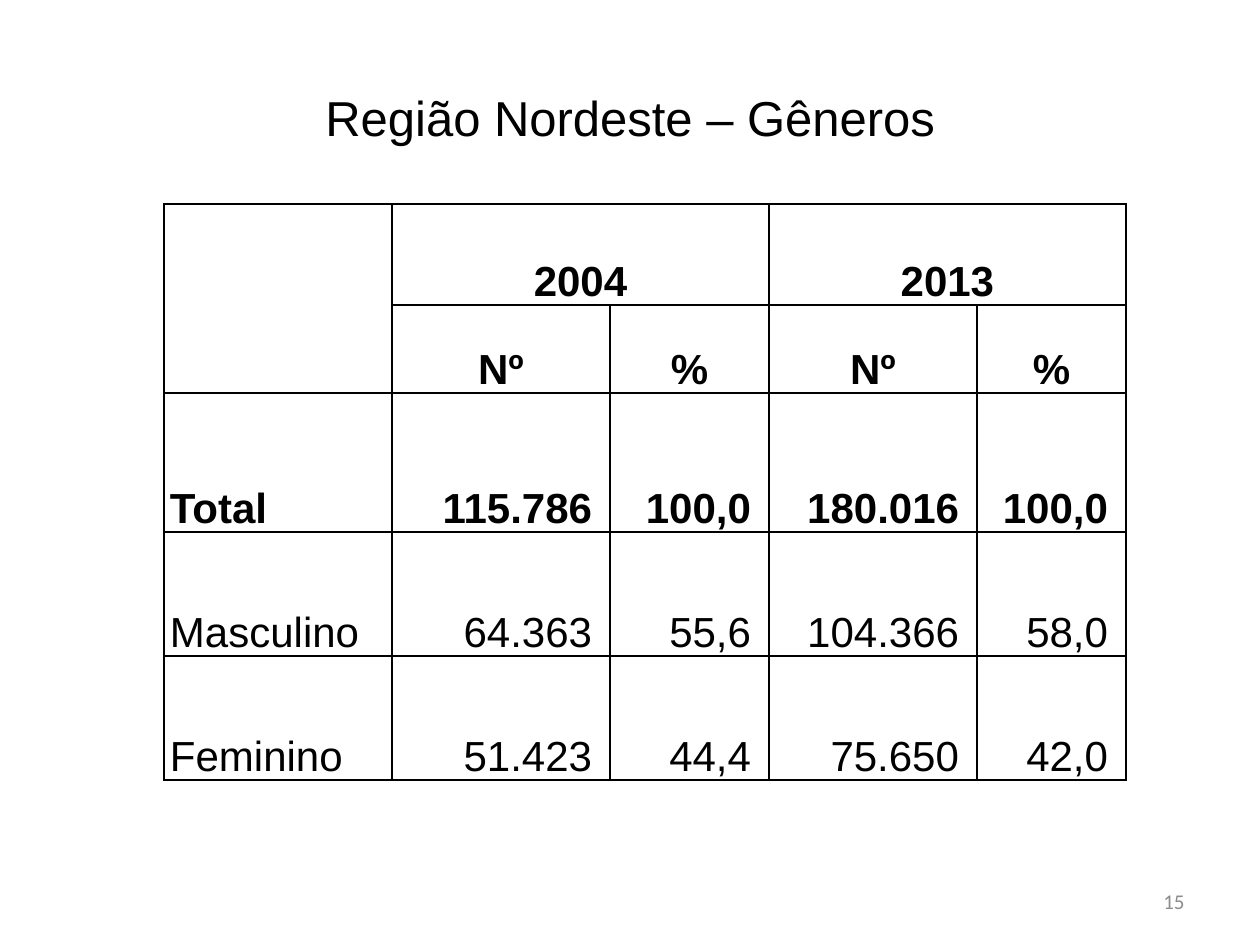
import lxml.etree
import pptx
import pptx.dml.color
import pptx.enum.text
import pptx.oxml.ns
import pptx.util

ALIGN = pptx.enum.text.PP_ALIGN
ANCHOR = pptx.enum.text.MSO_ANCHOR
PX_PER_INCH = 126

COLUMNS = [228, 218, 159, 208, 149]
ROWS = [101, 88, 139, 124, 124]
CELLS = [
    ["", "2004", "", "2013", ""],
    ["", "Nº", "%", "Nº", "%"],
    ["Total", "115.786", "100,0", "180.016", "100,0"],
    ["Masculino", "64.363", "55,6", "104.366", "58,0"],
    ["Feminino", "51.423", "44,4", "75.650", "42,0"],
]
HEADER_ROWS = 2
BOLD_ROWS = 3


def px(n):
    return pptx.util.Emu(round(n * 914400 / PX_PER_INCH))


def rgb(color):
    return pptx.dml.color.RGBColor.from_string(color)


def format_paragraph(p, size, color, align, name="Arial", bold=False):
    p.alignment = align
    p.font.name = name
    p.font.size = pptx.util.Pt(size)
    p.font.bold = bold
    p.font.color.rgb = rgb(color)


def set_borders(cell, color, points):
    """Line all four sides; border elements come before the cell fill."""
    qn = pptx.oxml.ns.qn
    tc_pr = cell._tc.get_or_add_tcPr()
    for i, side in enumerate(("a:lnL", "a:lnR", "a:lnT", "a:lnB")):
        ln = lxml.etree.Element(qn(side), w=str(pptx.util.Pt(points)))
        fill = lxml.etree.SubElement(ln, qn("a:solidFill"))
        lxml.etree.SubElement(fill, qn("a:srgbClr"), val=color)
        tc_pr.insert(i, ln)


def add_title(slide, x, y, w, h):
    title = slide.shapes.title
    title.left, title.top, title.width, title.height = map(px, (x, y, w, h))
    tf = title.text_frame
    tf.text = "Região Nordeste – Gêneros"
    tf.vertical_anchor = ANCHOR.MIDDLE
    format_paragraph(tf.paragraphs[0], 28, "000000", ALIGN.CENTER)


def format_cell(cell, row, col):
    is_number = row >= HEADER_ROWS and col > 0
    cell.fill.background()
    set_borders(cell, "000000", 1)
    cell.vertical_anchor = ANCHOR.BOTTOM
    cell.margin_left = px(6)
    cell.margin_right = px(18 if is_number else 6)
    cell.margin_top = cell.margin_bottom = 0
    if row < HEADER_ROWS:
        align = ALIGN.CENTER
    else:
        align = ALIGN.RIGHT if is_number else ALIGN.LEFT
    p = cell.text_frame.paragraphs[0]
    p.line_spacing = 1.07
    format_paragraph(p, 24, "000000", align, bold=row < BOLD_ROWS)


def add_gender_table(slide, x, y):
    frame = slide.shapes.add_table(len(ROWS), len(COLUMNS), px(x), px(y),
                                   px(sum(COLUMNS)), px(sum(ROWS)))
    table = frame.table
    table.first_row = table.horz_banding = False
    for column, width in zip(table.columns, COLUMNS):
        column.width = px(width)
    for row, height in zip(table.rows, ROWS):
        row.height = px(height)

    for r, texts in enumerate(CELLS):
        for c, text in enumerate(texts):
            cell = table.cell(r, c)
            cell.text = text
            format_cell(cell, r, c)

    # Empty corner, then one heading over each year's pair of columns
    table.cell(0, 0).merge(table.cell(1, 0))
    for c in (1, 3):
        table.cell(0, c).merge(table.cell(0, c + 1))


def add_slide_number(slide, x, y, w, h):
    tf = slide.shapes.add_textbox(px(x), px(y), px(w), px(h)).text_frame
    tf.word_wrap = True
    tf.vertical_anchor = ANCHOR.MIDDLE
    tf.text = "15"
    format_paragraph(tf.paragraphs[0], 12, "8C8C8C", ALIGN.RIGHT, "Calibri")


def main():
    prs = pptx.Presentation()
    prs.slide_width, prs.slide_height = px(1260), px(945)
    slide = prs.slides.add_slide(prs.slide_layouts[5])  # title only
    add_title(slide, 63, 38, 1134, 158)
    add_gender_table(slide, 164, 204)
    add_slide_number(slide, 903, 876, 294, 50)
    prs.save("out.pptx")


if __name__ == "__main__":
    main()
